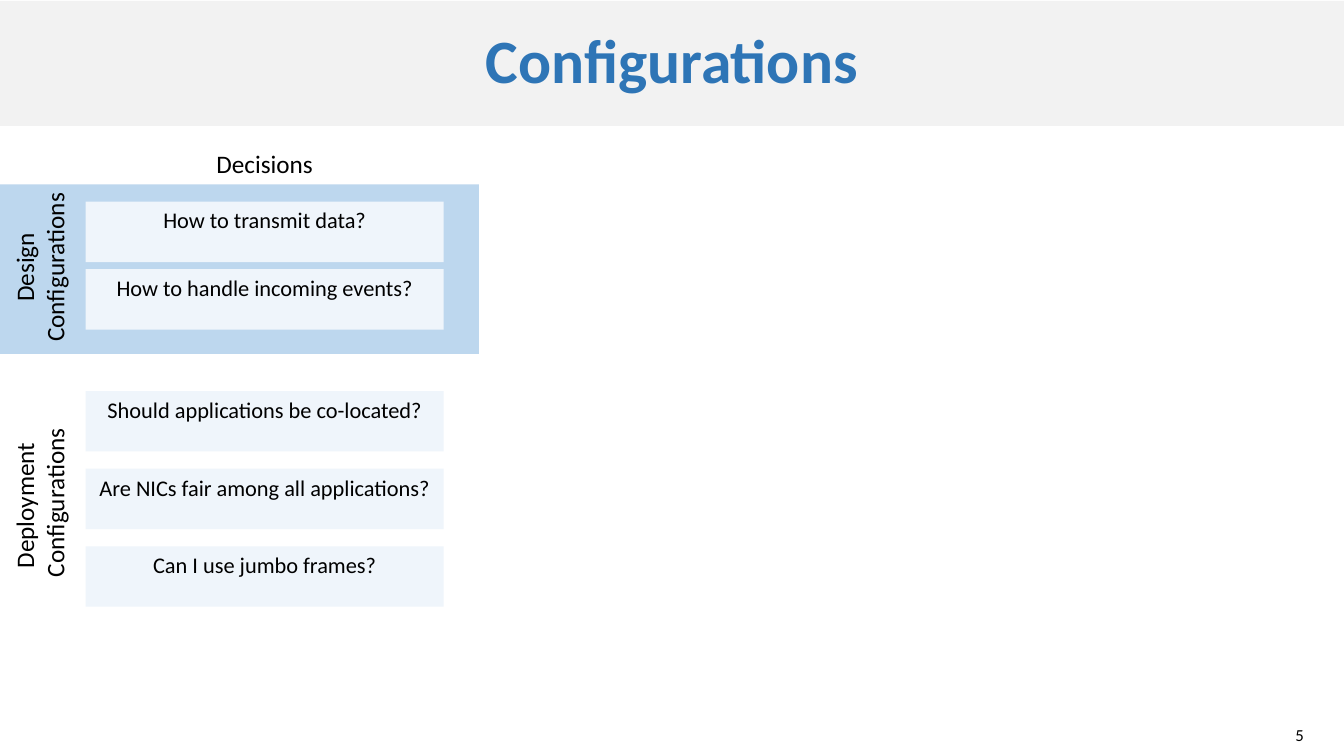
from dataclasses import dataclass

from lxml import etree
from pptx import Presentation
from pptx.dml.color import RGBColor
from pptx.enum.shapes import MSO_SHAPE
from pptx.enum.text import MSO_ANCHOR, MSO_AUTO_SIZE, PP_ALIGN
from pptx.oxml.ns import qn
from pptx.shapes.autoshape import Shape
from pptx.slide import Slide
from pptx.util import Inches, Pt

RECTANGLE = MSO_SHAPE.RECTANGLE
TOP, MIDDLE = MSO_ANCHOR.TOP, MSO_ANCHOR.MIDDLE
CENTER, RIGHT = PP_ALIGN.CENTER, PP_ALIGN.RIGHT
FIXED_SIZE, GROW = MSO_AUTO_SIZE.NONE, MSO_AUTO_SIZE.SHAPE_TO_FIT_TEXT

BLACK = RGBColor(0x00, 0x00, 0x00)
TITLE_BLUE = RGBColor(0x2E, 0x75, 0xB6)
TITLE_GRAY = RGBColor(0xF2, 0xF2, 0xF2)
BAND_BLUE = RGBColor(0xBD, 0xD7, 0xEE)
BOX_BLUE = RGBColor(0xEF, 0xF5, 0xFB)

FONT = "Calibri"
COLUMN_LEFT, COLUMN_WIDTH, BOX_HEIGHT = 0.85, 3.55, 0.6


@dataclass(frozen=True)
class Box:
    """A place on the slide, in inches."""

    left: float
    top: float
    width: float
    height: float


@dataclass(frozen=True)
class Group:
    """A sideways label with its evenly spaced decisions."""

    label: str
    label_box: Box
    first_top: float
    step: float
    decisions: tuple[str, ...]


GROUPS = (
    Group("Design \nConfigurations ", Box(-0.48, 2.27, 1.75, 0.71), 2, 0.67,
          ("How to transmit data?", "How to handle incoming events?")),
    Group("Deployment\n Configurations", Box(-0.51, 4.66, 1.81, 0.71), 3.88, 0.77,
          ("Should applications be co-located?",
           "Are NICs fair among all applications?",
           "Can I use jumbo frames?")),
)


def place(box: Box) -> tuple[int, int, int, int]:
    """Return the box as lengths for a shape."""
    return Inches(box.left), Inches(box.top), Inches(box.width), Inches(box.height)


def write_text(shape: Shape, text: str, *, size: float, color: RGBColor = BLACK,
               bold: bool = False, alignment: PP_ALIGN = CENTER,
               anchor: MSO_ANCHOR = TOP, wrap: bool = True,
               auto_size: MSO_AUTO_SIZE = GROW) -> None:
    """Fill a shape with formatted text, one paragraph per line."""
    frame = shape.text_frame
    frame.text = text
    frame.word_wrap = wrap
    frame.auto_size = auto_size
    frame.vertical_anchor = anchor
    for paragraph in frame.paragraphs:
        paragraph.alignment = alignment
        for run in paragraph.runs:
            run.font.name = FONT
            run.font.size = Pt(size)
            run.font.bold = bold
            run.font.color.rgb = color


def add_rectangle(slide: Slide, box: Box, color: RGBColor) -> Shape:
    """Add a plain filled rectangle."""
    shape = slide.shapes.add_shape(RECTANGLE, *place(box))
    shape.shadow.inherit = False
    shape.fill.solid()
    shape.fill.fore_color.rgb = color
    shape.line.fill.background()
    return shape


def outline_text(shape: Shape, color: RGBColor, width: float) -> None:
    """Draw a line around the letters of the first paragraph."""
    for run in shape.text_frame.paragraphs[0].runs:
        line = etree.Element(qn("a:ln"), w=str(Pt(width)))
        fill = etree.SubElement(line, qn("a:solidFill"))
        etree.SubElement(fill, qn("a:srgbClr"), val=str(color))
        run.font._element.insert(0, line)


def add_title(slide: Slide) -> None:
    """Place and format the title bar."""
    title = slide.shapes.title
    title.left, title.top, title.width, title.height = place(Box(0, 0.01, 13.33, 1.24))
    title.fill.solid()
    title.fill.fore_color.rgb = TITLE_GRAY
    write_text(title, "Configurations", size=44, color=TITLE_BLUE, bold=True,
               anchor=MIDDLE, auto_size=FIXED_SIZE)
    title.text_frame.paragraphs[0].line_spacing = 0.9
    outline_text(title, TITLE_BLUE, 0.75)


def add_group(slide: Slide, group: Group) -> None:
    """Add the decisions of a group and its sideways label."""
    for index, decision in enumerate(group.decisions):
        top = group.first_top + index * group.step
        box = Box(COLUMN_LEFT, top, COLUMN_WIDTH, BOX_HEIGHT)
        write_text(add_rectangle(slide, box, BOX_BLUE), decision, size=16)
    label = slide.shapes.add_textbox(*place(group.label_box))
    label.rotation = 270
    write_text(label, group.label, size=18, wrap=False)


def main() -> None:
    """Build the slide and save it."""
    presentation = Presentation()
    presentation.slide_width = Inches(13.33)
    presentation.slide_height = Inches(7.5)
    slide = presentation.slides.add_slide(presentation.slide_layouts[5])

    add_title(slide)
    add_rectangle(slide, Box(0, 1.83, 4.75, 1.68), BAND_BLUE)
    for group in GROUPS:
        add_group(slide, group)
    heading = slide.shapes.add_textbox(*place(Box(COLUMN_LEFT, 1.42, COLUMN_WIDTH, 0.4)))
    write_text(heading, "Decisions", size=18)
    number = slide.shapes.add_textbox(*place(Box(11.96, 7.14, 1.07, 0.3)))
    write_text(number, "5", size=12, alignment=RIGHT, anchor=MIDDLE, auto_size=FIXED_SIZE)

    presentation.save("out.pptx")


if __name__ == "__main__":
    main()
